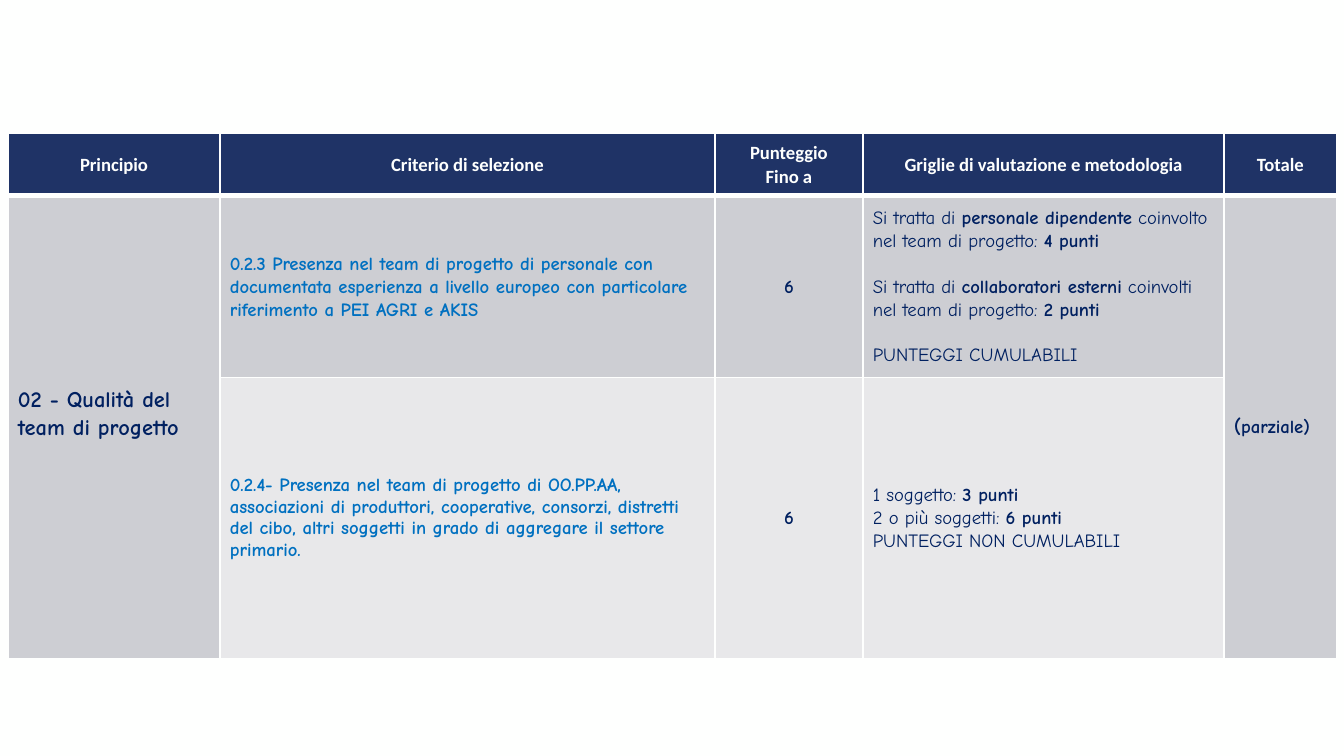
from lxml.etree import SubElement
from pptx import Presentation
from pptx.dml.color import RGBColor
from pptx.enum.text import MSO_ANCHOR, PP_ALIGN
from pptx.oxml.ns import qn
from pptx.util import Emu, Pt

WHITE = RGBColor(0xFE, 0xFF, 0xFE)
HEADER_BLUE = RGBColor(0x1F, 0x33, 0x66)
NAVY = RGBColor(0x00, 0x20, 0x60)
LIGHT_BLUE = RGBColor(0x00, 0x70, 0xC0)
GREY = RGBColor(0xCD, 0xCE, 0xD3)
PALE_GREY = RGBColor(0xE8, 0xE8, 0xEA)

PX_PER_INCH = 134.4
COLUMN_WIDTHS = [212, 495, 148, 361, 113]
ROW_HEIGHTS = [61, 182, 281]
THIN, THICK = Pt(0.96), Pt(3)

HEADERS = [
    ["Principio"],
    ["Criterio di selezione"],
    ["Punteggio", "Fino a"],
    ["Griglie di valutazione e metodologia"],
    ["Totale"],
]
# Asterisks enclose the bold parts of the grids
CRITERIA = [
    (
        "0.2.3 Presenza nel team di progetto di personale con documentata esperienza "
        "a livello europeo con particolare riferimento a PEI AGRI e AKIS",
        "6",
        [
            "Si tratta di *personale dipendente* coinvolto nel team di progetto: *4 punti*",
            "Si tratta di *collaboratori esterni* coinvolti nel team di progetto: *2 punti*",
            "PUNTEGGI CUMULABILI",
        ],
        GREY, 1.07, 12,
    ),
    (
        "0.2.4- Presenza nel team di progetto di OO.PP.AA, associazioni di produttori, "
        "cooperative, consorzi, distretti del cibo, altri soggetti in grado di "
        "aggregare il settore primario.",
        "6",
        ["1 soggetto: *3 punti*", "2 o più soggetti: *6 punti*", "PUNTEGGI NON CUMULABILI"],
        PALE_GREY, 1.0, 0,
    ),
]


def px(length):
    return Emu(round(length * 914400 / PX_PER_INCH))


def style_cell(cell, fill, top=THIN, bottom=THIN):
    """Set borders, fill, margins and anchor of a cell."""
    properties = cell._tc.get_or_add_tcPr()
    for side, width in (("L", THIN), ("R", THIN), ("T", top), ("B", bottom)):
        line = SubElement(properties, qn(f"a:ln{side}"), w=str(width))
        line_fill = SubElement(line, qn("a:solidFill"))
        SubElement(line_fill, qn("a:srgbClr"), val=str(WHITE))
    cell.fill.solid()
    cell.fill.fore_color.rgb = fill
    cell.margin_left = cell.margin_right = px(10)
    cell.margin_top = cell.margin_bottom = px(7)
    cell.vertical_anchor = MSO_ANCHOR.MIDDLE


def write_cell(cell, lines, color=NAVY, size=10, font="Comic Neue", align=PP_ALIGN.LEFT,
               spacing=1.07, gap=0, all_bold=True):
    """Write one paragraph a line; without all_bold, only starred parts are bold."""
    frame = cell.text_frame
    for index, text in enumerate(lines):
        paragraph = frame.add_paragraph() if index else frame.paragraphs[0]
        paragraph.alignment = align
        paragraph.line_spacing = spacing
        if index and gap:
            paragraph.space_before = Pt(gap)
        paragraph.font.name = font
        paragraph.font.size = Pt(size)
        paragraph.font.color.rgb = color
        for part_index, part in enumerate(text.split("*")):
            if part:
                run = paragraph.add_run()
                run.text = part
                run.font.bold = all_bold or part_index % 2 == 1


def add_header(table):
    for column, lines in enumerate(HEADERS):
        cell = table.cell(0, column)
        style_cell(cell, HEADER_BLUE, bottom=THICK)
        write_cell(cell, lines, WHITE, font="Calibri", align=PP_ALIGN.CENTER)


def add_criteria(table):
    for row, (criterion, score, grid, fill, spacing, gap) in enumerate(CRITERIA, start=1):
        for column in range(len(COLUMN_WIDTHS)):
            merged = column in (0, len(COLUMN_WIDTHS) - 1)
            style_cell(table.cell(row, column), GREY if merged else fill,
                       top=THICK if row == 1 else THIN)
        write_cell(table.cell(row, 1), [criterion], LIGHT_BLUE, spacing=spacing)
        write_cell(table.cell(row, 2), [score], align=PP_ALIGN.CENTER)
        write_cell(table.cell(row, 3), grid, gap=gap, all_bold=False)


def add_merged_cells(table):
    last = len(COLUMN_WIDTHS) - 1
    for column in (0, last):
        table.cell(1, column).merge(table.cell(2, column))

    principle = table.cell(1, 0)
    write_cell(principle, ["02 - Qualità del team di progetto"], size=12)
    principle.margin_bottom = px(34)  # lifts the text above the middle

    total = table.cell(1, last)
    write_cell(total, ["*(*parziale)"], spacing=1.0)
    total.text_frame.paragraphs[0].runs[0].font.size = Pt(11)


def add_score_table(slide, left, top):
    frame = slide.shapes.add_table(len(ROW_HEIGHTS), len(COLUMN_WIDTHS), px(left), px(top),
                                   px(sum(COLUMN_WIDTHS)), px(sum(ROW_HEIGHTS)))
    table = frame.table
    for column, width in zip(table.columns, COLUMN_WIDTHS):
        column.width = px(width)
    for row, height in zip(table.rows, ROW_HEIGHTS):
        row.height = px(height)
    add_header(table)
    add_criteria(table)
    add_merged_cells(table)


def main():
    presentation = Presentation()
    presentation.slide_width, presentation.slide_height = px(1344), px(756)
    slide = presentation.slides.add_slide(presentation.slide_layouts[6])
    slide.background.fill.solid()
    slide.background.fill.fore_color.rgb = WHITE
    add_score_table(slide, 8, 133)
    presentation.save("out.pptx")


if __name__ == "__main__":
    main()
